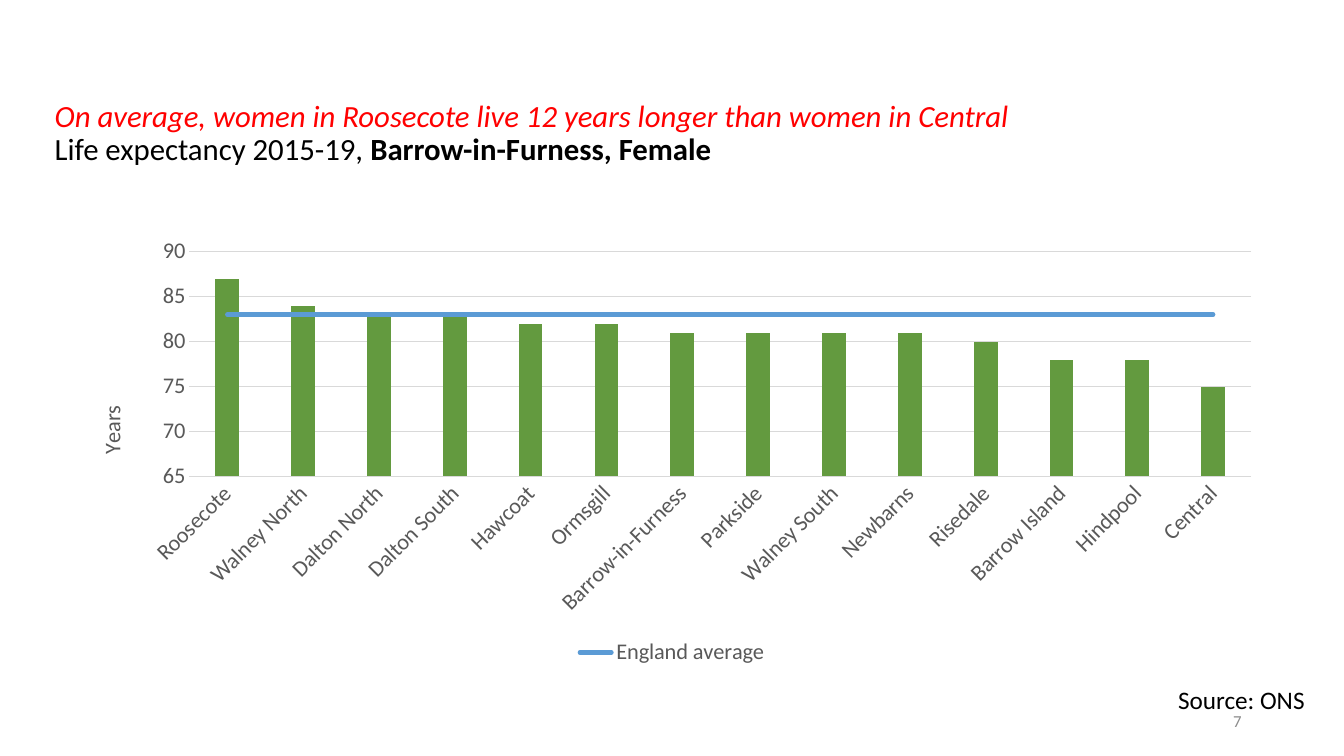
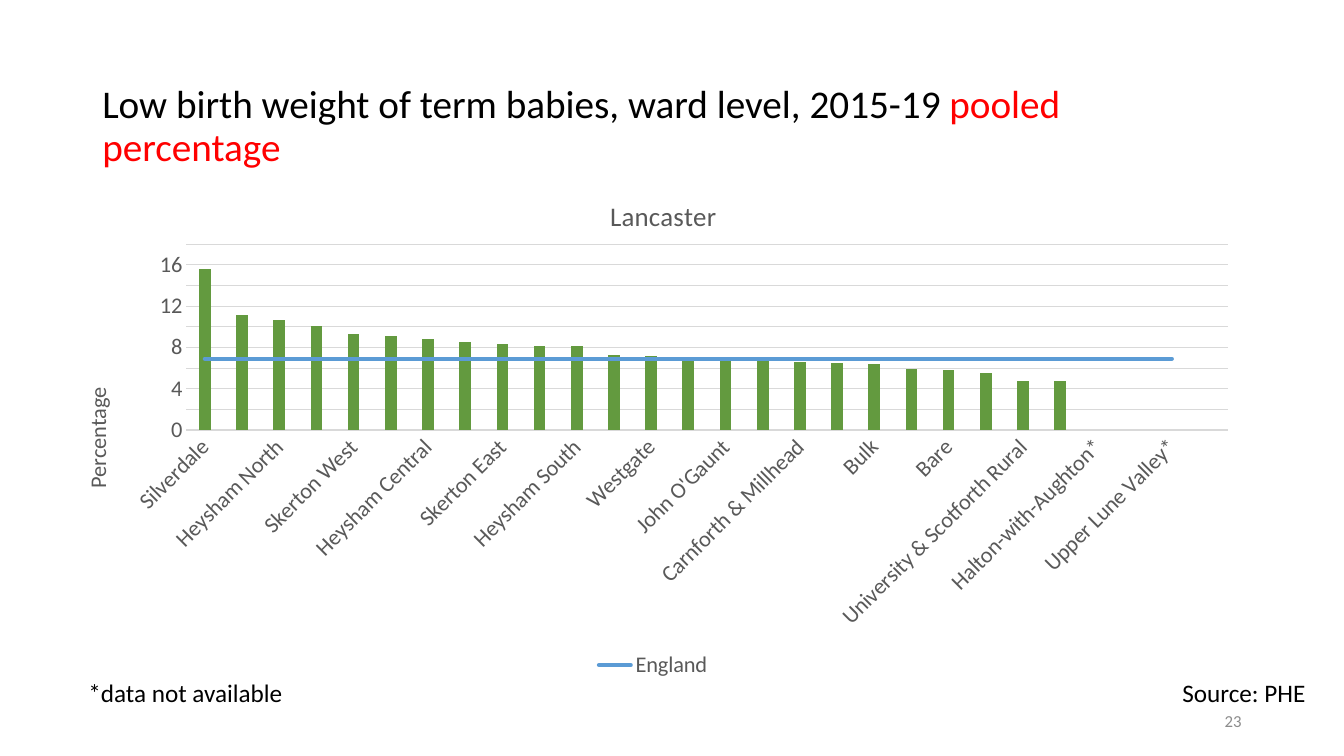
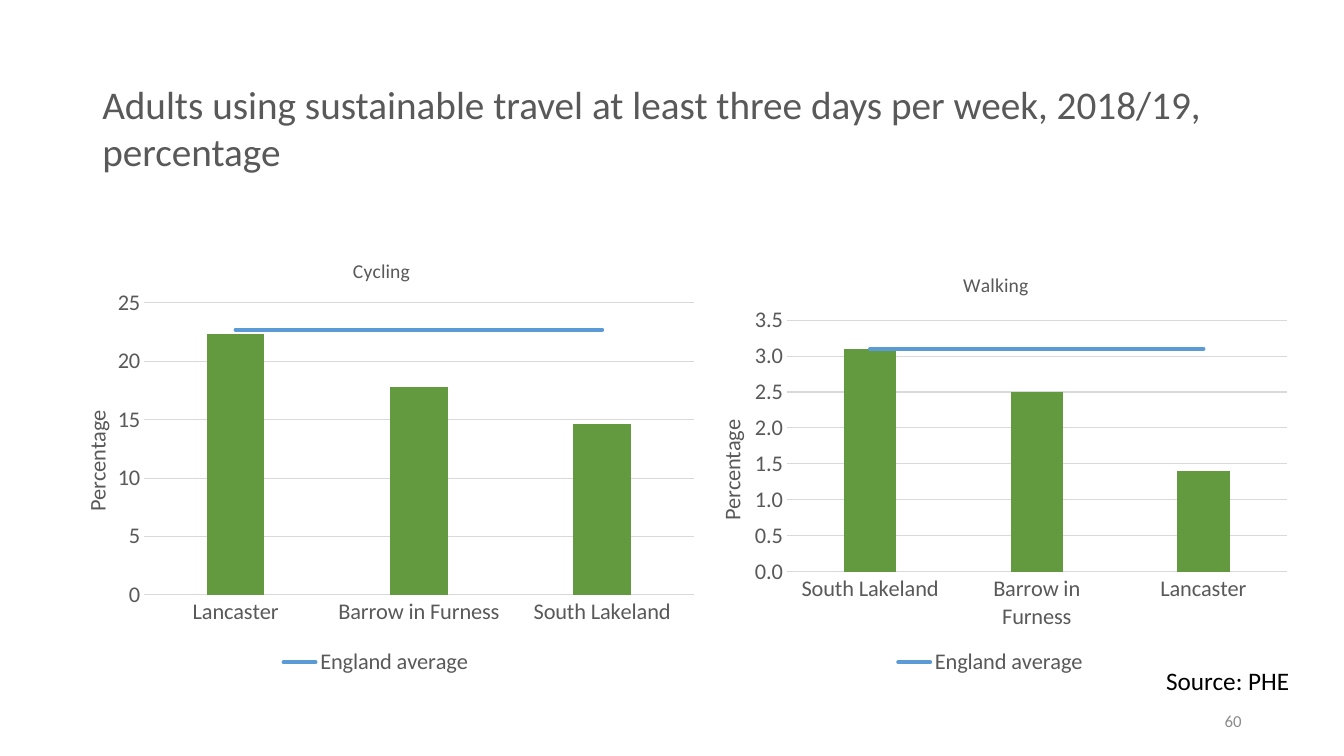
from pptx import Presentation
from pptx.chart.data import CategoryChartData
from pptx.dml.color import RGBColor
from pptx.enum.chart import (XL_CHART_TYPE as ChartType, XL_LEGEND_POSITION as LegendPosition,
                             XL_MARKER_STYLE as MarkerStyle, XL_TICK_MARK as TickMark)
from pptx.enum.text import MSO_ANCHOR as Anchor, PP_ALIGN as Align
from pptx.oxml import parse_xml
from pptx.oxml.ns import nsdecls
from pptx.util import Pt

FONT = "Calibri"
COLORS = {
    "black": "000000",
    "red": "FF0000",
    "gray": "595959",
    "number": "8C8C8C",
    "grid": "D9D9D9",
    "bar": "639A3F",
    "average": "5B9BD5",
}
AXIS_SIZE = 16
BLANK_LAYOUT = 6


def rgb(name):
    return RGBColor.from_string(COLORS[name])


def style_font(font, size, color, bold=False, italic=False):
    font.name = FONT
    font.size = Pt(size)
    font.color.rgb = rgb(color)
    font.bold = bold
    font.italic = italic


def add_text(slide, box, lines, size, align=Align.LEFT, anchor=Anchor.TOP, spacing=1.0):
    """Add a text box; each line is a list of (text, color, font options) runs."""
    shape = slide.shapes.add_textbox(*map(Pt, box))
    frame = shape.text_frame
    frame.word_wrap = True
    frame.vertical_anchor = anchor
    paragraph = frame.paragraphs[0]
    paragraph.alignment = align
    paragraph.line_spacing = spacing
    for index, line in enumerate(lines):
        if index:
            paragraph.add_line_break()
        for text, color, options in line:
            run = paragraph.add_run()
            run.text = text
            style_font(run.font, size, color, **options)


def add_title(slide, lines, size=28, left=66, top=52, spacing=0.9):
    add_text(slide, (left, top, 828, 78), lines, size, anchor=Anchor.MIDDLE, spacing=spacing)


def add_slide(presentation, number):
    slide = presentation.slides.add_slide(presentation.slide_layouts[BLANK_LAYOUT])
    add_text(slide, (678, 500, 216, 29), [[(str(number), "number", {})]], 12,
             Align.RIGHT, Anchor.MIDDLE)
    return slide


def add_source(slide, publisher, right, top):
    width = 182
    add_text(slide, (right - width, top, width, 29),
             [[(f"Source: {publisher}", "black", {})]], 18, Align.RIGHT)


def set_layout(parent, index, values, inner=False):
    """Place a chart part by fractions of the chart: x, y and, if given, w, h."""
    for old in parent.xpath("c:layout"):
        parent.remove(old)
    target = '<c:layoutTarget val="inner"/>' if inner else ""
    modes = '<c:xMode val="edge"/><c:yMode val="edge"/>'
    sizes = "".join(f'<c:{key} val="{value}"/>' for key, value in zip("xywh", values))
    parent.insert(index, parse_xml(
        f'<c:layout {nsdecls("c")}><c:manualLayout>{target}{modes}{sizes}'
        '</c:manualLayout></c:layout>'))


def write_chart_title(title, text, size):
    run = title.text_frame.paragraphs[0].add_run()
    run.text = text
    style_font(run.font, size, "gray")


def move_average_to_line(chart):
    """Turn the second bar series into a line on the same axes."""
    bar_chart = chart.element.xpath(".//c:barChart")[0]
    series = bar_chart.xpath("c:ser")[1]
    for flag in series.xpath("c:invertIfNegative"):
        series.remove(flag)
    axis_ids = "".join(f'<c:axId val="{value}"/>' for value in bar_chart.xpath("c:axId/@val"))
    line_chart = parse_xml(
        f'<c:lineChart {nsdecls("c")}><c:grouping val="standard"/><c:varyColors val="0"/>'
        f'<c:marker val="1"/>{axis_ids}</c:lineChart>')
    line_chart.insert(2, series)
    bar_chart.addnext(line_chart)
    average = chart.plots[1].series[0]
    average.format.line.color.rgb = rgb("average")
    average.format.line.width = Pt(3)
    average.marker.style = MarkerStyle.NONE
    average.smooth = False
    chart.element.xpath(".//c:lineChart/c:ser/c:spPr/a:ln")[0].set("cap", "rnd")


def style_axes(chart, scale, number_format, axis_title, axis_title_at, slanted):
    category_axis, value_axis = chart.category_axis, chart.value_axis
    for axis in (category_axis, value_axis):
        axis.major_tick_mark = axis.minor_tick_mark = TickMark.NONE
        style_font(axis.tick_labels.font, AXIS_SIZE, "gray")
    category_axis.format.line.color.rgb = rgb("grid")
    category_axis.format.line.width = Pt(0.75)
    if slanted:
        chart.element.xpath(".//c:catAx/c:txPr/a:bodyPr")[0].set("rot", "-2700000")

    value_axis.minimum_scale, value_axis.maximum_scale, value_axis.major_unit = scale
    value_axis.tick_labels.number_format = number_format
    value_axis.tick_labels.number_format_is_linked = False
    value_axis.format.line.fill.background()
    value_axis.has_major_gridlines = True
    value_axis.major_gridlines.format.line.color.rgb = rgb("grid")
    value_axis.major_gridlines.format.line.width = Pt(0.75)
    write_chart_title(value_axis.axis_title, axis_title, AXIS_SIZE)
    title = chart.element.xpath(".//c:valAx/c:title")[0]
    body = title.xpath(".//a:bodyPr")[0]
    body.set("rot", "-5400000")
    body.set("vert", "horz")
    set_layout(title, 1, axis_title_at)


def style_legend(chart):
    chart.has_legend = True
    legend = chart.legend
    legend.position = LegendPosition.BOTTOM
    legend.include_in_layout = False
    style_font(legend.font, AXIS_SIZE, "gray")
    chart.element.xpath(".//c:legend/c:legendPos")[0].addnext(parse_xml(
        f'<c:legendEntry {nsdecls("c")}><c:idx val="0"/><c:delete val="1"/></c:legendEntry>'))


def add_average_chart(slide, box, plot_box, categories, values, average_name, averages,
                      scale, axis_title, axis_title_at, number_format="0", title=None,
                      title_size=14, title_at=None, overlap=0, slanted=False):
    """Add columns with a comparison line across them."""
    data = CategoryChartData()
    data.categories = categories
    data.add_series("Series 1", values)
    data.add_series(average_name, averages)
    frame = slide.shapes.add_chart(ChartType.COLUMN_CLUSTERED, *map(Pt, box), data)
    chart = frame.chart
    style_font(chart.font, AXIS_SIZE, "black")
    chart.has_title = title is not None
    if title:
        write_chart_title(chart.chart_title, title, title_size)
        set_layout(chart.element.xpath("c:chart/c:title")[0], 1, title_at)
    columns = chart.plots[0]
    columns.vary_by_categories = False
    columns.gap_width = 219
    columns.overlap = overlap
    columns.series[0].format.fill.solid()
    columns.series[0].format.fill.fore_color.rgb = rgb("bar")
    move_average_to_line(chart)
    style_axes(chart, scale, number_format, axis_title, axis_title_at, slanted)
    style_legend(chart)
    set_layout(chart.element.xpath(".//c:plotArea")[0], 0, plot_box, inner=True)


def add_life_expectancy(presentation):
    slide = add_slide(presentation, 7)
    add_title(slide, [
        [("On average, women in Roosecote live 12 years longer than women in Central",
          "red", {"italic": True})],
        [("Life expectancy 2015-19, ", "black", {}),
         ("Barrow-in-Furness, Female", "black", {"bold": True})],
    ], size=22, left=32, top=57)
    add_source(slide, "ONS", 939, 485)
    wards = ["Roosecote", "Walney North", "Dalton North", "Dalton South", "Hawcoat",
             "Ormsgill", "Barrow-in-Furness", "Parkside", "Walney South", "Newbarns",
             "Risedale", "Barrow Island", "Hindpool", "Central"]
    years = [87, 84, 83, 83, 82, 82, 81, 81, 81, 81, 80, 78, 78, 75]
    add_average_chart(slide, (49, 164, 862, 315), (0.1, 0.05, 0.88, 0.51), wards, years,
                      "England average", [83] * len(wards), (65, 90, 5),
                      "Years", (0.02, 0.39), overlap=-27, slanted=True)


def add_birth_weight(presentation):
    slide = add_slide(presentation, 23)
    add_title(slide, [[("Low birth weight of term babies, ward level, 2015-19", "black", {}),
                       (" pooled percentage", "red", {})]])
    add_source(slide, "PHE", 939.6, 480)
    wards = ["Silverdale", "Poulton", "Heysham North", "Warton", "Skerton West", "Harbour",
             "Heysham Central", "Scotforth East", "Skerton East", "Castle", "Heysham South",
             "Overton", "Westgate", "Scotforth West", "John O'Gaunt", "Torrisholme",
             "Carnforth & Millhead", "Bolton & Slyne", "Bulk", "Ellel", "Bare",
             "Lower Lune Valley", "University & Scotforth Rural", "Marsh",
             "Halton-with-Aughton*", "Kellet*", "Upper Lune Valley*"]
    shares = [15.6, 11.1, 10.6, 10.1, 9.3, 9.1, 8.8, 8.5, 8.3, 8.1, 8.1, 7.3, 7.2, 7, 6.9,
              6.9, 6.6, 6.5, 6.4, 5.9, 5.8, 5.5, 4.7, 4.7]
    slots = len(wards) + 1  # the axis ends with one empty slot
    add_average_chart(slide, (39, 119, 855, 369), (0.11, 0.15, 0.87, 0.36), wards + [""],
                      shares + [None] * (slots - len(shares)),
                      "England", [6.9] * len(wards) + [None], (0, 18, 2),
                      "Percentage", (0.02, 0.42), number_format="General",
                      title="Lancaster", title_size=19.2, title_at=(0.46, 0.05),
                      overlap=-27, slanted=True)
    add_text(slide, (56, 480, 163, 29), [[("*data not available", "black", {})]], 18)


def add_sustainable_travel(presentation):
    slide = add_slide(presentation, 60)
    add_title(slide, [[("Adults using sustainable travel at least three days per week, "
                        "2018/19, percentage", "gray", {})]], spacing=1.0)
    places = ["Lancaster", "Barrow in Furness", "South Lakeland"]
    panels = [
        ("Cycling", (32, 165, 473, 321), (0.15, 0.16, 0.83, 0.65), places,
         [22.3, 17.8, 14.6], 22.7, (0, 25, 5), "0", 0.46),
        ("Walking", (487, 176, 441, 310), (0.17, 0.17, 0.81, 0.58), places[::-1],
         [3.1, 2.5, 1.4], 3.1, (0, 3.5, 0.5), "0.0", 0.45),
    ]
    for title, box, plot_box, names, values, average, scale, number_format, title_x in panels:
        add_average_chart(slide, box, plot_box, names, values, "England average",
                          [average] * len(names), scale, "Percentage", (0.05, 0.39),
                          number_format, title, title_at=(title_x, 0.05))
    add_source(slide, "PHE", 928, 472)


def main():
    presentation = Presentation()
    presentation.slide_width, presentation.slide_height = Pt(960), Pt(540)
    add_life_expectancy(presentation)
    add_birth_weight(presentation)
    add_sustainable_travel(presentation)
    presentation.save("out.pptx")


if __name__ == "__main__":
    main()
